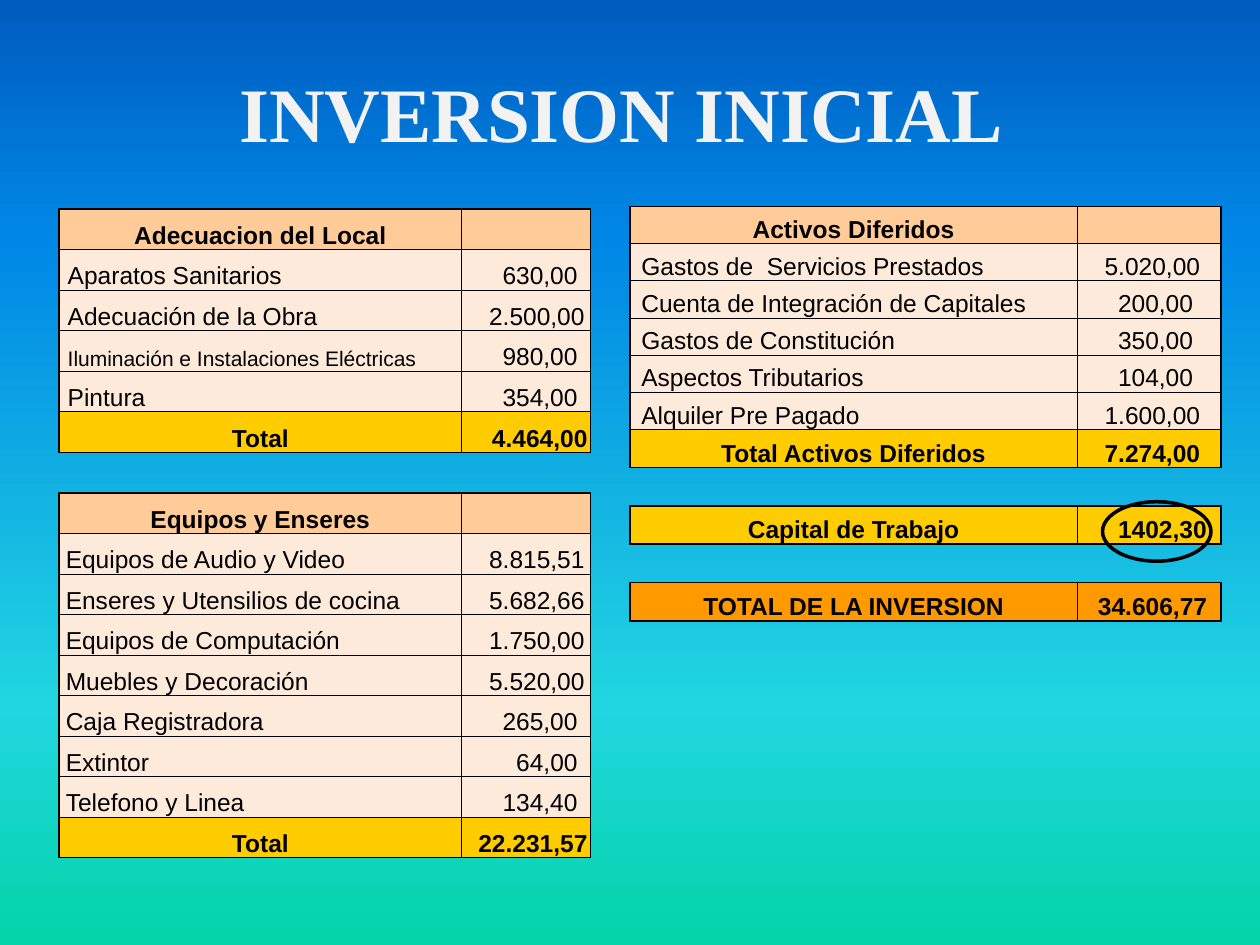
from pptx import Presentation
from pptx.dml.color import RGBColor
from pptx.enum.shapes import MSO_SHAPE as Shape
from pptx.enum.text import MSO_ANCHOR as Anchor, PP_ALIGN as Align
from pptx.oxml import parse_xml
from pptx.util import Pt

NS = 'xmlns:a="http://schemas.openxmlformats.org/drawingml/2006/main"'
PLAIN = "{2D5ABB26-0587-4C30-8999-92F81FD0307C}"
STOPS = [(0, "03D4A8"), (25, "21D6E0"), (75, "0087E6"), (100, "005CBF")]
FILLS = {"head": "FFCC99", "item": "FDEADA", "total": "FFCC00",
         "sum": "FFCC00", "grand": "FF9900"}
LEADS = {5: 31.1, 6: 23.3, 7: 23.3, 8: 15.6, 9: 7.8}
GAP = ("gap", "", "")

LEFT = [
    GAP,
    GAP,
    ("head", "Adecuacion del Local", ""),
    ("item", "Aparatos Sanitarios", "630,00"),
    ("item", "Adecuación de la Obra", "2.500,00"),
    ("item", "Iluminación e Instalaciones Eléctricas", "980,00"),
    ("item", "Pintura", "354,00"),
    ("total", "Total", "4.464,00"),
    GAP,
    ("head", "Equipos y Enseres", ""),
    ("item", "Equipos de Audio y Video", "8.815,51"),
    ("item", "Enseres y Utensilios de cocina", "5.682,66"),
    ("item", "Equipos de Computación", "1.750,00"),
    ("item", "Muebles y Decoración", "5.520,00"),
    ("item", "Caja Registradora", "265,00"),
    ("item", "Extintor", "64,00"),
    ("item", "Telefono y Linea", "134,40"),
    ("total", "Total", "22.231,57"),
]
RIGHT = [
    ("head", "Activos Diferidos", ""),
    ("item", "Gastos de  Servicios Prestados", "5.020,00"),
    ("item", "Cuenta de Integración de Capitales", "200,00"),
    ("item", "Gastos de Constitución", "350,00"),
    ("item", "Aspectos Tributarios", "104,00"),
    ("item", "Alquiler Pre Pagado", "1.600,00"),
    ("sum", "Total Activos Diferidos", "7.274,00"),
    GAP,
    ("sum", "Capital de Trabajo", "1402,30"),
    GAP,
    ("grand", "TOTAL DE LA INVERSION", "34.606,77"),
]


def color(code):
    return RGBColor.from_string(code)


def border(cell, widths):
    props = cell._tc.get_or_add_tcPr()
    for side, width in zip("LRTB", widths):
        props.append(parse_xml(
            f'<a:ln{side} {NS} w="{Pt(width)}"><a:solidFill>'
            f'<a:srgbClr val="000000"/></a:solidFill></a:ln{side}>'))


def write(cell, text, size, bold, align, lead):
    cell.margin_right = cell.margin_top = cell.margin_bottom = 0
    cell.margin_left = Pt(lead)
    cell.vertical_anchor = Anchor.BOTTOM
    para = cell.text_frame.paragraphs[0]
    para.alignment = align
    font = para.font
    font.name, font.size, font.bold = "Arial", Pt(size), bold
    font.color.rgb = color("000000")
    if text:
        para.add_run().text = text


def add_table(slide, rows, left, top, cols, heights, leads):
    frame = slide.shapes.add_table(
        len(rows), 2, Pt(left), Pt(top), Pt(sum(cols)), Pt(sum(heights)))
    table = frame.table
    table._tbl.tblPr[0].text = PLAIN
    table.first_row = table.horz_banding = False
    for col, width in zip(table.columns, cols):
        col.width = Pt(width)
    kinds = ["gap"] + [row[0] for row in rows] + ["gap"]
    block = -1
    for i, (kind, label, value) in enumerate(rows):
        table.rows[i].height = Pt(heights[i])
        name, amount = table.cell(i, 0), table.cell(i, 1)
        block += kind == "head"
        item = kind == "item"
        size = 12 if len(label) > 35 else 14
        write(name, label, size, not item,
              Align.LEFT if item else Align.CENTER, leads[block] if item else 0)
        mid = kind in ("total", "grand")
        lead = 4 if kind == "grand" else LEADS.get(len(value), 0)
        write(amount, value, 14, not item,
              Align.CENTER if mid else Align.LEFT, lead)
        if kind == "gap":
            continue
        over = 1 if kinds[i] == "gap" else 0.5
        under = 1 if kinds[i + 2] == "gap" else 0.5
        border(name, (1, 0.5, over, under))
        border(amount, (0.5, 1, over, under))
        for cell in (name, amount):
            cell.fill.solid()
            cell.fill.fore_color.rgb = color(FILLS[kind])
    return table


def paint(slide):
    fill = slide.background.fill
    fill.gradient()
    grad = slide._element.cSld.bg.bgPr[0]
    stops = "".join(f'<a:gs pos="{pos * 1000}"><a:srgbClr val="{code}"/></a:gs>'
                    for pos, code in STOPS)
    grad.getparent().replace(grad, parse_xml(
        f'<a:gradFill {NS} rotWithShape="1"><a:gsLst>{stops}</a:gsLst>'
        '<a:lin ang="16200000" scaled="0"/></a:gradFill>'))


def main():
    deck = Presentation()
    deck.slide_width, deck.slide_height = Pt(720), Pt(540)
    slide = deck.slides.add_slide(deck.slide_layouts[6])
    paint(slide)

    costs = add_table(slide, LEFT, 33.7, 73.2, (230.2, 73.6),
                      [23.16] * len(LEFT), (5, 3.9))
    costs.cell(0, 0).merge(costs.cell(0, 1))
    add_table(slide, RIGHT, 360, 118.1, (255.6, 82.1),
              [21.23] * 6 + [21.9] * 5, (6.5,))

    ring = slide.shapes.add_shape(
        Shape.OVAL, Pt(630), Pt(286.7), Pt(62), Pt(34))
    ring.shadow.inherit = False
    ring.fill.background()
    ring.line.color.rgb = color("000000")
    ring.line.width = Pt(2)

    box = slide.shapes.add_textbox(Pt(129.6), Pt(33.8), Pt(489.6), Pt(60.5))
    box.text_frame.word_wrap = True
    title = box.text_frame.paragraphs[0]
    title.text = "INVERSION INICIAL"
    font = title.font
    font.name, font.size, font.bold = "Times New Roman", Pt(44), True
    font.color.rgb = color("F2F2F2")
    deck.save("out.pptx")


if __name__ == "__main__":
    main()
